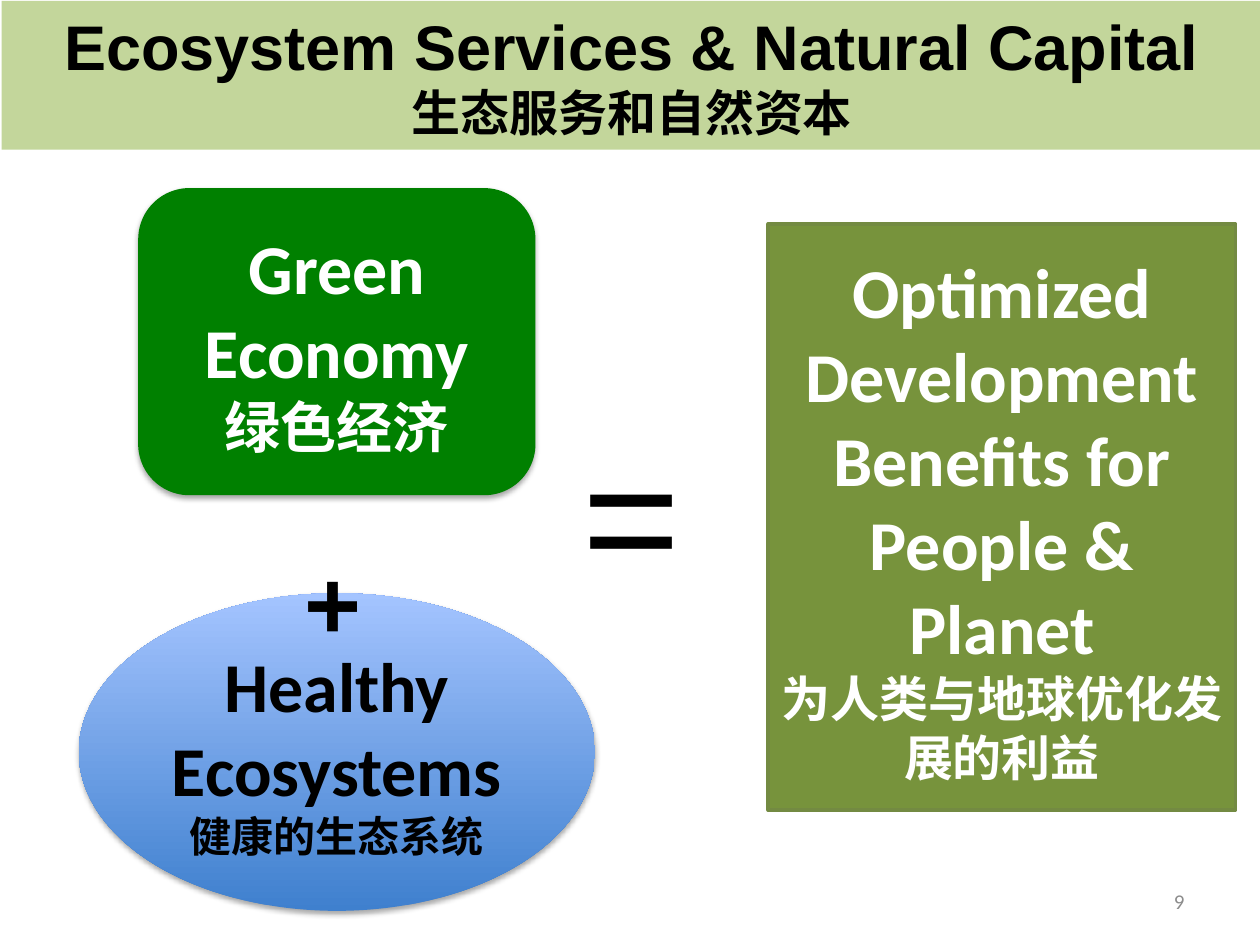
from lxml.etree import SubElement
from pptx import Presentation
from pptx.dml.color import RGBColor
from pptx.enum.shapes import MSO_SHAPE
from pptx.enum.text import MSO_ANCHOR, PP_ALIGN
from pptx.oxml.ns import qn
from pptx.util import Pt


def color(code):
    return RGBColor.from_string(code)


def write(frame, *lines, font="Calibri", ink="000000", bold=True,
          align=PP_ALIGN.CENTER, anchor=MSO_ANCHOR.MIDDLE, base=None):
    """Fill a frame with (text, size) lines, one paragraph each."""
    frame.word_wrap = True
    frame.vertical_anchor = anchor
    for i, (text, size) in enumerate(lines):
        para = frame.add_paragraph() if i else frame.paragraphs[0]
        para.alignment = align
        run = para.add_run()
        run.text = text
        run.font.name = font
        run.font.size = Pt(size)
        run.font.bold = bold
        run.font.color.rgb = color(ink)
        props = run.font._element
        SubElement(props, qn("a:ea"), typeface="Noto Sans CJK SC")
        if base:
            props.set("baseline", str(base * 1000))


class Deck:
    def __init__(self, width, height):
        self.show = Presentation()
        self.show.slide_width = Pt(width)
        self.show.slide_height = Pt(height)
        self.slide = self.show.slides.add_slide(self.show.slide_layouts[6])

    def label(self, box, *lines, **style):
        text = self.slide.shapes.add_textbox(*map(Pt, box))
        write(text.text_frame, *lines, **style)

    def block(self, kind, box, fill, *lines, edge=None, shade=False, **style):
        """Add a filled shape; a pair of fills runs from bottom to top."""
        shape = self.slide.shapes.add_shape(kind, *map(Pt, box))
        shape.shadow.inherit = False
        if isinstance(fill, tuple):
            shape.fill.gradient()
            shape.fill.gradient_angle = 90
            for place, (stop, code) in enumerate(
                    zip(shape.fill.gradient_stops, fill)):
                stop.position = place
                stop.color.rgb = color(code)
        else:
            shape.fill.solid()
            shape.fill.fore_color.rgb = color(fill)
        if edge:
            shape.line.color.rgb = color(edge)
            shape.line.width = Pt(2)
        else:
            shape.line.fill.background()
        if shade:
            self.shade(shape)
        write(shape.text_frame, *lines, **style)

    def shade(self, shape):
        """Drop a soft shadow straight down."""
        effects = shape._element.spPr.find(qn("a:effectLst"))
        drop = SubElement(effects, qn("a:outerShdw"), blurRad=str(Pt(3.1)),
                          dist=str(Pt(1.8)), dir="5400000", rotWithShape="0")
        tint = SubElement(drop, qn("a:srgbClr"), val="000000")
        SubElement(tint, qn("a:alpha"), val="35000")


def main():
    deck = Deck(720, 540)
    deck.block(MSO_SHAPE.ROUNDED_RECTANGLE, (79, 107.5, 227, 175.5), "008000",
               ("Green Economy", 40), ("绿色经济", 32),
               ink="FFFFFF", shade=True)
    deck.block(MSO_SHAPE.OVAL, (45, 339, 295, 181.5), ("3F80CE", "A4C4FF"),
               ("Healthy Ecosystems", 40), ("健康的生态系统", 24), shade=True)
    sign = dict(font="Arial", align=PP_ALIGN.LEFT, anchor=MSO_ANCHOR.TOP)
    deck.label((167, 242, 68, 85), ("+", 96), base=-25, **sign)
    deck.label((326, 230.5, 108, 124), ("=", 96), bold=False, **sign)
    deck.block(MSO_SHAPE.RECTANGLE, (439, 128, 267, 335), "77933C",
               ("Optimized Development Benefits for People & Planet", 40),
               ("为人类与地球优化发展的利益", 28),
               ink="FFFFFF", edge="738A42")
    deck.block(MSO_SHAPE.RECTANGLE, (1, 0.5, 720, 85), "C3D69B",
               ("Ecosystem Services & Natural Capital", 36),
               ("生态服务和自然资本", 28),
               font="Arial", anchor=MSO_ANCHOR.TOP)
    deck.label((516, 500.5, 168, 29), ("9", 12),
               ink="8C8C8C", bold=False, align=PP_ALIGN.RIGHT)
    deck.show.save("out.pptx")


if __name__ == "__main__":
    main()
